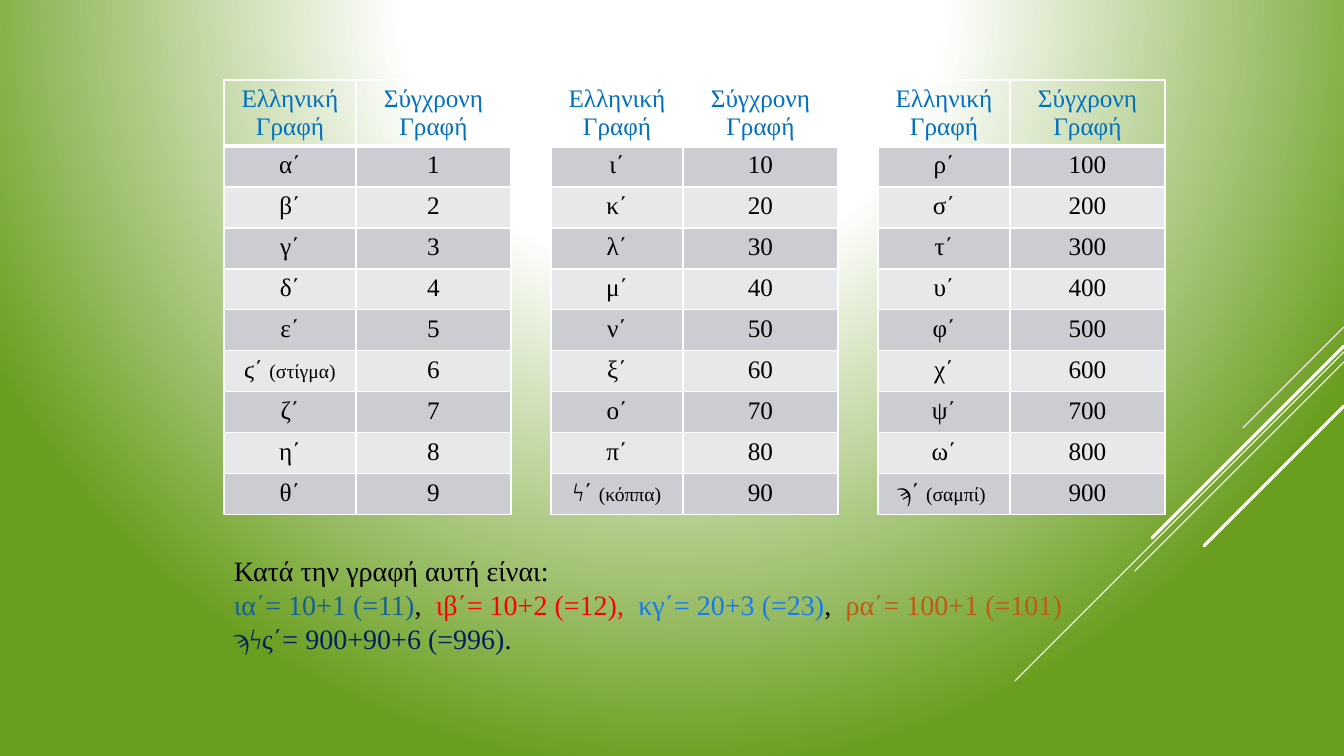
import pptx
import pptx.dml.color
import pptx.enum.shapes
import pptx.enum.text
import pptx.oxml
import pptx.oxml.ns
import pptx.util

HEADINGS = ["Ελληνική Γραφή", "Σύγχρονη Γραφή"]
# Unit of each table, then its numerals; a named numeral is (numeral, name)
NUMERALS = {
    1: ["α΄", "β΄", "γ΄", "δ΄", "ε΄", ("ϛ΄ ", "(στίγμα)"), "ζ΄", "η΄", "θ΄"],
    10: ["ι΄", "κ΄", "λ΄", "μ΄", "ν΄", "ξ΄", "ο΄", "π΄", ("ϟ΄ ", "(κόππα)")],
    100: ["ρ΄", "σ΄", "τ΄", "υ΄", "φ΄", "χ΄", "ψ΄", "ω΄", ("ϡ΄ ", "(σαμπί) ")],
}
EXAMPLES = [
    [("Κατά την γραφή αυτή είναι:", "black")],
    [("ια΄= 10+1 (=11)", "teal"), (",  ", "black"),
     ("ιβ΄= 10+2 (=12),  ", "red"), ("κγ΄= 20+3 (=23)", "blue"),
     (",  ", "black"), ("ρα΄= 100+1 (=101)", "rust")],
    [("ϡϟς΄= 900+90+6 (=996)", "navy"), (".", "black")],
]
# Diagonals from the right edge: start height, run to the lower left, points
DIAGONALS = [(327, 101, 0.75), (352, 329, 0.75), (362, 209, 0.75),
             (346, 192, 2.25), (406, 140, 2.25)]
COLORS = {
    "white": "FFFFFF", "black": "000000", "green": "6A9E1F",
    "heading": "0070C0", "odd": "CCCDD2", "even": "E7E8EA",
    "teal": "146194", "red": "FF0000", "blue": "167BF3",
    "rust": "C15A16", "navy": "002060",
}
FONT = "Times New Roman"
SLIDE_W, SLIDE_H = 1344, 756
TABLE_LEFT, TABLE_TOP, TABLE_STEP = 224, 80, 327
COLUMN_WIDTHS = [132, 155]
HEADING_H, ROW_H = 65, 41
EXAMPLES_BOX = (224, 549, 941, 112)
PX = 914400 / 100.8


def px(length):
    return pptx.util.Emu(round(length * PX))


def rgb(name):
    return pptx.dml.color.RGBColor.from_string(COLORS[name])


def xml(tag, body="", attributes=""):
    """Make one DrawingML element."""
    return pptx.oxml.parse_xml(
        f'<a:{tag} {pptx.oxml.ns.nsdecls("a")} {attributes}>{body}</a:{tag}>')


def add_run(paragraph, words, size, color):
    run = paragraph.add_run()
    run.text = words
    run.font.name = FONT
    run.font.size = pptx.util.Pt(size)
    run.font.bold = False
    run.font.color.rgb = rgb(color)


def paint_background(slide):
    slide.background.fill.gradient()
    gradient = slide.element.xpath(".//p:bg//a:gradFill")[0]
    for child in list(gradient):
        gradient.remove(child)
    stops = "".join(
        f'<a:gs pos="{position}000"><a:srgbClr val="{COLORS[color]}"/></a:gs>'
        for position, color in [(0, "white"), (35, "white"), (100, "green")])
    gradient.append(xml("gsLst", stops))
    gradient.append(xml(
        "path", '<a:fillToRect l="50000" t="-80000" r="50000" b="180000"/>',
        'path="circle"'))


def add_diagonal(slide, top, run, weight):
    diagonal = slide.shapes.add_connector(
        pptx.enum.shapes.MSO_CONNECTOR.STRAIGHT,
        px(SLIDE_W), px(top), px(SLIDE_W - run), px(top + run))
    diagonal.line.color.rgb = rgb("white")
    diagonal.line.width = pptx.util.Pt(weight)
    diagonal.line._get_or_add_ln().set("cap", "rnd")
    diagonal.element.spPr.append(xml("effectLst"))


def set_borders(cell, bottoms):
    """Draw white borders; bottoms are the top and bottom widths in points."""
    top, bottom = bottoms
    widths = {"lnL": 1, "lnR": 1, "lnT": top, "lnB": bottom}
    properties = cell._tc.get_or_add_tcPr()
    for place, (side, points) in enumerate(widths.items()):
        fill = f'<a:solidFill><a:srgbClr val="{COLORS["white"]}"/></a:solidFill>'
        properties.insert(place, xml(side, fill, f'w="{points * 12700}"'))


def add_numerals(slide, left, unit, numerals):
    rows = [HEADINGS] + [[numeral, str(unit * count)]
                         for count, numeral in enumerate(numerals, 1)]
    heights = [HEADING_H] + [ROW_H] * len(numerals)
    table = slide.shapes.add_table(
        len(rows), len(COLUMN_WIDTHS), px(left), px(TABLE_TOP),
        px(sum(COLUMN_WIDTHS)), px(sum(heights))).table
    table.first_row = table.horz_banding = False
    for column, width in zip(table.columns, COLUMN_WIDTHS):
        column.width = px(width)
    for r, (entries, height) in enumerate(zip(rows, heights)):
        table.rows[r].height = px(height)
        for c, entry in enumerate(entries):
            cell = table.cell(r, c)
            if r == 0:
                cell.fill.background()
            else:
                cell.fill.solid()
                cell.fill.fore_color.rgb = rgb("odd" if r % 2 else "even")
            set_borders(cell, (3 if r == 1 else 1, 3 if r == 0 else 1))
            paragraph = cell.text_frame.paragraphs[0]
            paragraph.alignment = pptx.enum.text.PP_ALIGN.CENTER
            parts = (entry,) if isinstance(entry, str) else entry
            for words, size in zip(parts, (18, 14)):
                add_run(paragraph, words, size, "black" if r else "heading")


def add_examples(slide):
    frame = slide.shapes.add_textbox(*map(px, EXAMPLES_BOX)).text_frame
    frame.word_wrap = True
    for i, line in enumerate(EXAMPLES):
        paragraph = frame.add_paragraph() if i else frame.paragraphs[0]
        for words, color in line:
            add_run(paragraph, words, 20, color)


def main():
    deck = pptx.Presentation()
    deck.slide_width, deck.slide_height = px(SLIDE_W), px(SLIDE_H)
    slide = deck.slides.add_slide(deck.slide_layouts[6])
    paint_background(slide)
    for diagonal in DIAGONALS:
        add_diagonal(slide, *diagonal)
    for i, (unit, numerals) in enumerate(NUMERALS.items()):
        add_numerals(slide, TABLE_LEFT + i * TABLE_STEP, unit, numerals)
    add_examples(slide)
    deck.save("out.pptx")


if __name__ == "__main__":
    main()
